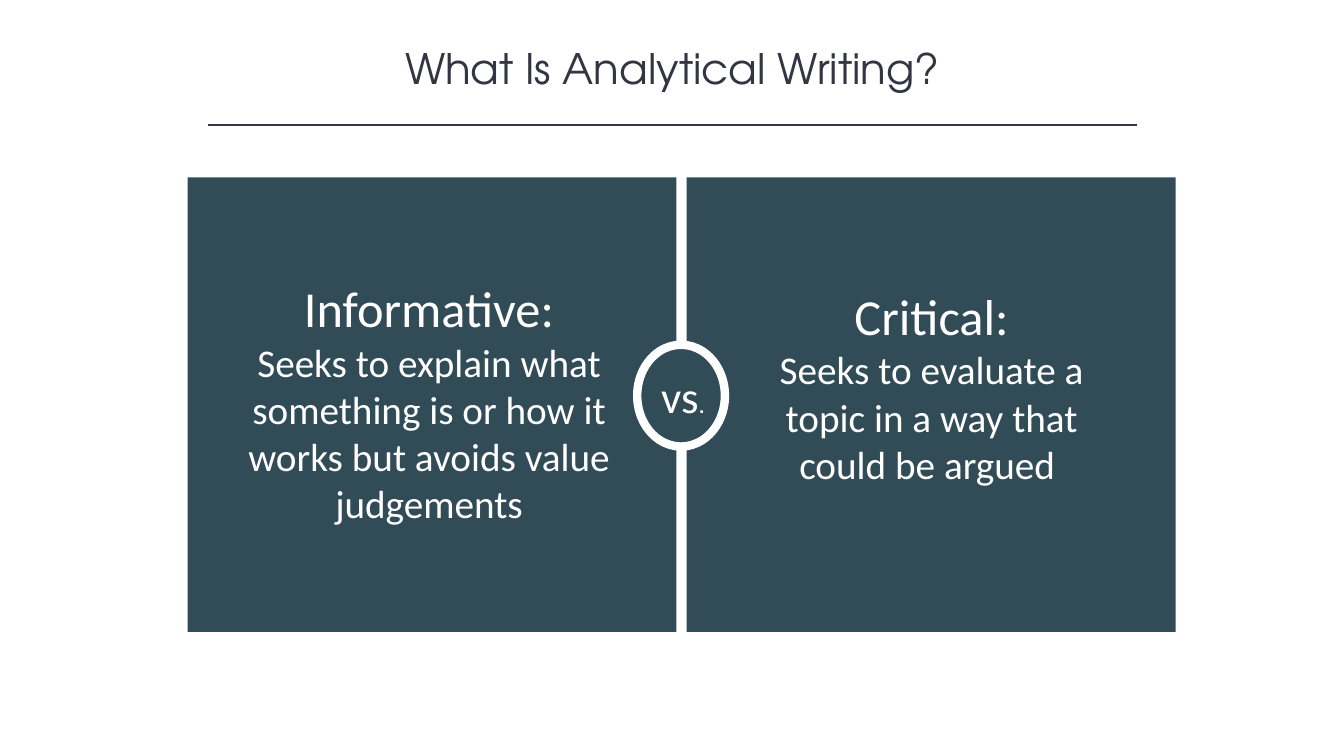
from lxml import etree
from pptx import Presentation
from pptx.dml.color import RGBColor
from pptx.enum.shapes import MSO_CONNECTOR, MSO_SHAPE
from pptx.enum.text import MSO_ANCHOR, PP_ALIGN
from pptx.oxml.ns import qn
from pptx.util import Inches, Pt

RECTANGLE, OVAL = MSO_SHAPE.RECTANGLE, MSO_SHAPE.OVAL
STRAIGHT = MSO_CONNECTOR.STRAIGHT
CENTER = PP_ALIGN.CENTER
TOP, MIDDLE = MSO_ANCHOR.TOP, MSO_ANCHOR.MIDDLE

INK = RGBColor(0x32, 0x35, 0x42)
TEAL = RGBColor(0x31, 0x4C, 0x57)
WHITE = RGBColor(0xFF, 0xFF, 0xFF)
TITLE_FONT = "TeX Gyre Adventor"
BODY_FONT = "Calibri"
TITLE_ONLY = 5


class ComparisonSlide:
    """Holds the deck, its current slide and the shared style."""

    def __init__(self, width, height):
        self.deck = Presentation()
        self.deck.slide_width = Inches(width)
        self.deck.slide_height = Inches(height)
        self.page = self.deck.slides.add_slide(self.deck.slide_layouts[TITLE_ONLY])

    def fill_text(self, box, paragraphs, anchor=MIDDLE, font=BODY_FONT, color=WHITE, wrap=True):
        """Fill a box; each paragraph is a list of (text, size) spans."""
        frame = box.text_frame
        frame_format = {
            "word_wrap": wrap, "vertical_anchor": anchor,
            "margin_left": Inches(0.1), "margin_right": Inches(0.1),
            "margin_top": Inches(0.05), "margin_bottom": Inches(0.05),
        }
        for name, value in frame_format.items():
            setattr(frame, name, value)
        for index, spans in enumerate(paragraphs):
            para = frame.add_paragraph() if index else frame.paragraphs[0]
            para.alignment = CENTER
            for text, size in spans:
                span = para.add_run()
                span.text = text
                for name, value in {"name": font, "size": Pt(size)}.items():
                    setattr(span.font, name, value)
                span.font.color.rgb = color

    def title(self, text, left, top, width, height):
        box = self.page.shapes.title
        place = {"left": left, "top": top, "width": width, "height": height}
        for name, value in place.items():
            setattr(box, name, Inches(value))
        self.fill_text(box, [[(text, 30)]], TOP, TITLE_FONT, INK)

    def rule(self, left, right, top):
        line = self.page.shapes.add_connector(
            STRAIGHT, Inches(left), Inches(top), Inches(right), Inches(top))
        line.line.color.rgb = INK
        line.line.width = Pt(1)
        etree.SubElement(line._element.spPr, qn("a:effectLst"))

    def shape(self, kind, left, top, width, height, outline=0):
        box = self.page.shapes.add_shape(
            kind, Inches(left), Inches(top), Inches(width), Inches(height))
        box.shadow.inherit = False
        box.fill.solid()
        box.fill.fore_color.rgb = TEAL
        if outline:
            box.line.color.rgb = WHITE
            box.line.width = Pt(outline)
        else:
            box.line.fill.background()
        return box

    def label(self, spans, left, top, width, height):
        box = self.page.shapes.add_textbox(
            Inches(left), Inches(top), Inches(width), Inches(height))
        self.fill_text(box, [spans], TOP, wrap=False)


def main():
    slide = ComparisonSlide(13.33, 7.5)

    # Heading
    slide.title("What Is Analytical Writing?", 1.67, 0.37, 10, 0.61)
    slide.rule(2.06, 11.28, 1.24)

    # Two panels and the ring between them
    panel_width, gap = 4.85, 0.1
    for column in range(2):
        slide.shape(RECTANGLE, 1.86 + column * (panel_width + gap), 1.76, panel_width, 4.51)
    slide.shape(OVAL, 6.32, 3.42, 0.87, 1.01, outline=6)

    # Definitions
    definitions = [
        ("Informative:",
         "Seeks to explain what something is or how it works but avoids value judgements",
         (2.3, 2.69, 3.91, 2.59)),
        ("Critical:",
         "Seeks to evaluate a topic in a way that could be argued ",
         (7.31, 2.77, 3.86, 2.12)),
    ]
    for term, meaning, place in definitions:
        box = slide.shape(RECTANGLE, *place)
        slide.fill_text(box, [[(term, 36)], [(meaning, 28)]])

    # Versus label
    slide.label([("vs", 32), (".", 18)], 6.44, 3.61, 0.67, 0.64)

    slide.deck.save("out.pptx")


if __name__ == "__main__":
    main()
